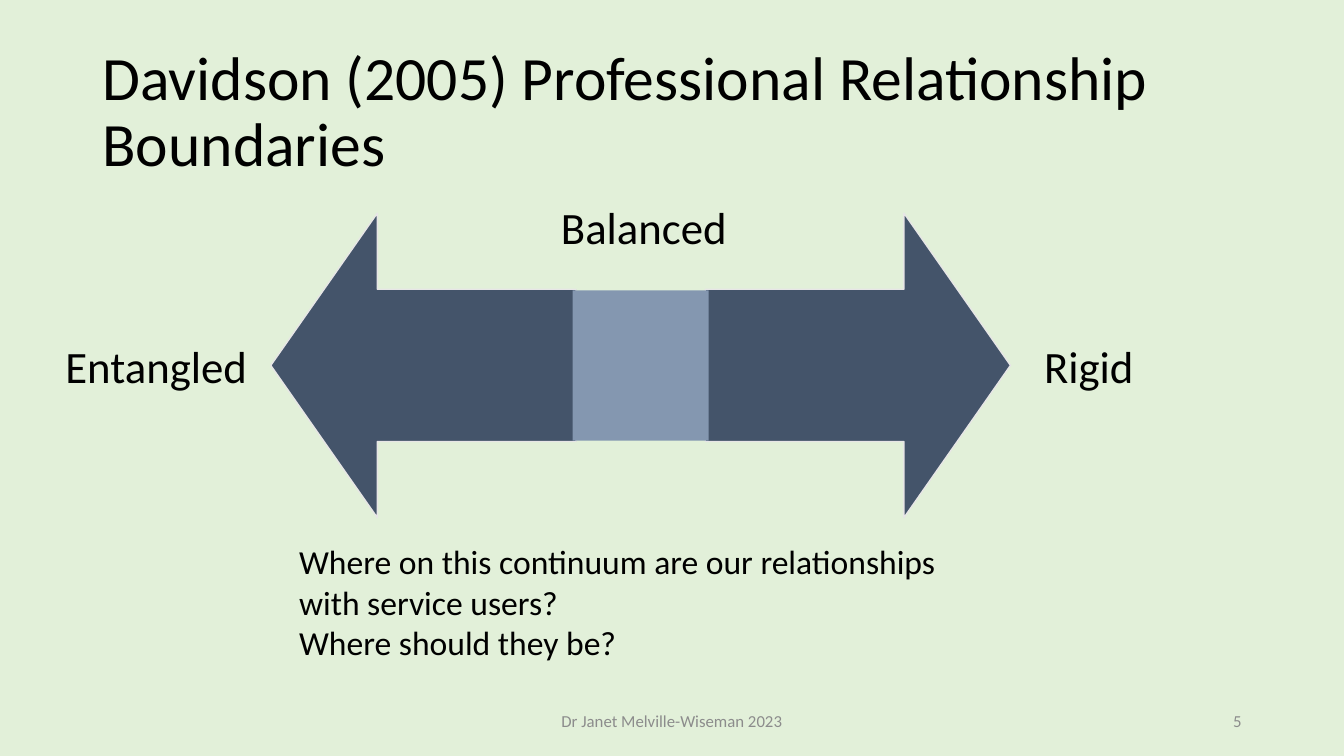
import pptx
import pptx.util
import pptx.dml.color
import pptx.enum.shapes
import pptx.enum.text

Pt = pptx.util.Pt
Align = pptx.enum.text.PP_ALIGN
Anchor = pptx.enum.text.MSO_ANCHOR
Fit = pptx.enum.text.MSO_AUTO_SIZE
Shape = pptx.enum.shapes.MSO_SHAPE

COLORS = {
    "background": "E2F0D9",
    "arrow": "44546A",
    "edge": "E7E6E6",
    "middle": "8497B0",
    "text": "000000",
    "footer": "8C8C8C",
}


class SlideBuilder:
    font = "Calibri"

    def __init__(self, deck):
        self.page = deck.slides.add_slide(deck.slide_layouts[5])
        self.paint(self.page.background.fill, "background")

    def color(self, name):
        return pptx.dml.color.RGBColor.from_string(COLORS[name])

    def paint(self, fill, name):
        fill.solid()
        fill.fore_color.rgb = self.color(name)

    def set_text(self, box, lines, size, color="text", align=Align.LEFT,
                 anchor=Anchor.TOP, fit=Fit.NONE, spacing=1.0):
        frame = box.text_frame
        frame.word_wrap = True
        frame.auto_size = fit
        frame.vertical_anchor = anchor
        for index, line in enumerate(lines):
            para = frame.add_paragraph() if index else frame.paragraphs[0]
            para.alignment = align
            para.line_spacing = spacing
            span = para.add_run()
            span.text = line
            span.font.name = self.font
            span.font.size = Pt(size)
            span.font.color.rgb = self.color(color)

    def title(self, text, left, top, width, height):
        box = self.page.shapes.title
        box.left, box.top, box.width, box.height = map(Pt, (left, top, width, height))
        self.set_text(box, [text], 44, anchor=Anchor.MIDDLE, spacing=0.9)

    def label(self, lines, left, top, width, height, size=32, align=Align.LEFT):
        box = self.page.shapes.add_textbox(*map(Pt, (left, top, width, height)))
        self.set_text(box, lines, size, align=align, fit=Fit.SHAPE_TO_FIT_TEXT)

    def footer(self, text, left, width, align):
        box = self.page.shapes.add_textbox(*map(Pt, (left, 500.5, width, 28.75)))
        self.set_text(box, [text], 12, "footer", align, Anchor.MIDDLE)

    def shape(self, shapes, kind, fill, left, top, width, height):
        shape = shapes.add_shape(kind, *map(Pt, (left, top, width, height)))
        shape.shadow.inherit = False
        self.paint(shape.fill, fill)
        shape.line.fill.background()
        return shape

    def arrows(self, placements, top, width, height):
        group = self.page.shapes.add_group_shape()
        for left, rotation in placements:
            arrow = self.shape(group.shapes, Shape.UP_ARROW, "arrow",
                               left, top, width, height)
            arrow.rotation = rotation
            arrow.adjustments[0] = 0.5
            arrow.adjustments[1] = 0.35
            self.paint(arrow.line.fill, "edge")
            arrow.line.width = Pt(1)

    def block(self, left, top, width, height):
        self.shape(self.page.shapes, Shape.RECTANGLE, "middle", left, top, width, height)


def main():
    deck = pptx.Presentation()
    deck.slide_width, deck.slide_height = Pt(960), Pt(540)
    slide = SlideBuilder(deck)
    slide.title("Davidson (2005) Professional Relationship Boundaries", 66, 28.75, 828, 104.4)
    slide.arrows([(193.7, 270), (504, 90)], 152, 217.5, 218)
    slide.footer("Dr Janet Melville-Wiseman 2023", 318, 324, Align.CENTER)
    slide.footer("5", 678, 216, Align.RIGHT)
    slide.label(["Entangled"], 39.6, 238.3, 153.4, 46)
    slide.label(["Rigid"], 738.7, 238.3, 136, 46)
    slide.block(409, 207.4, 97.2, 107.3)
    slide.label(["Balanced"], 389.5, 139, 141, 46, align=Align.CENTER)
    slide.label(["Where on this continuum are our relationships with service users?",
                 "Where should they be?"], 206.6, 383, 507, 94.3, size=24)
    deck.save("out.pptx")


if __name__ == "__main__":
    main()
